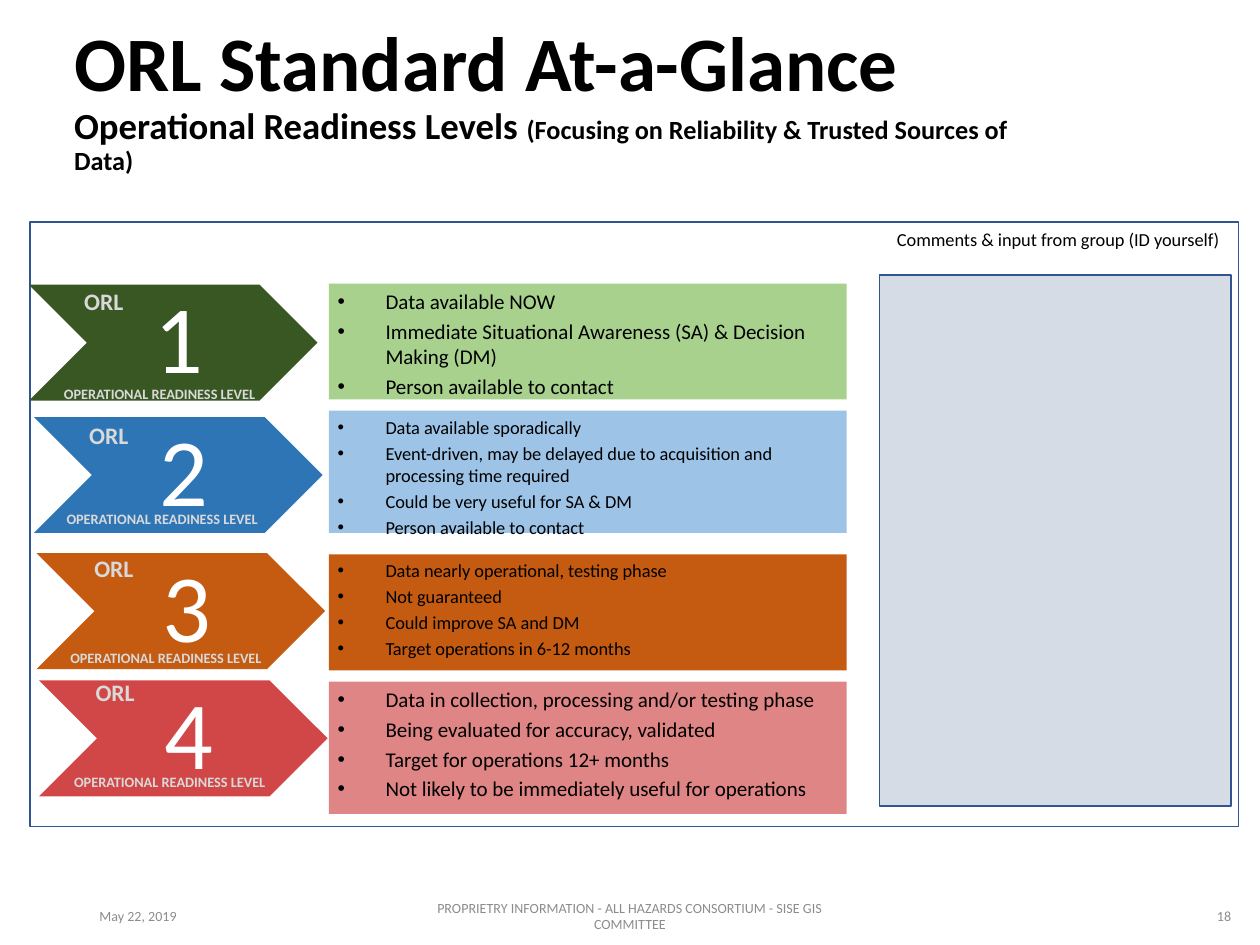
from dataclasses import dataclass
from typing import Optional

from lxml.etree import SubElement
from pptx import Presentation
from pptx.dml.color import RGBColor
from pptx.enum.shapes import MSO_SHAPE
from pptx.enum.text import MSO_ANCHOR, PP_ALIGN
from pptx.oxml.ns import qn
from pptx.util import Inches, Pt


@dataclass(frozen=True)
class Theme:
    font: str = "Calibri"
    black: str = "000000"
    white: str = "FFFFFF"
    outline: str = "325491"
    comment_fill: str = "D6DCE5"
    label: str = "D9D9D9"
    footer: str = "8C8C8C"
    title_size: float = 44
    subtitle_size: float = 21
    detail_size: float = 15
    number_size: float = 55
    label_size: float = 13.5
    caption_size: float = 8.2
    comment_size: float = 10.5
    footer_size: float = 8


THEME = Theme()


@dataclass(frozen=True)
class Box:
    left: float
    top: float
    width: float
    height: float

    def lengths(self) -> tuple:
        return tuple(Inches(v) for v in (self.left, self.top, self.width, self.height))


@dataclass(frozen=True)
class Level:
    number: str
    chevron: tuple[float, float]
    label: tuple[float, float]
    caption: tuple[float, float]
    chevron_fill: str
    panel_top: float
    panel_height: float
    panel_fill: str
    text_size: float
    points: tuple[str, ...]
    chevron_opacity: int = 100
    panel_opacity: int = 100


LEVELS = (
    Level("1", (0.23, 2.26), (0.57, 2.23), (0.41, 3.01), "385723",
          2.25, 0.92, "A9D18E", 12,
          ("Data available NOW",
           "Immediate Situational Awareness (SA) & Decision Making (DM)",
           "Person available to contact")),
    Level("2", (0.27, 3.31), (0.61, 3.29), (0.43, 4.0), "2E75B6",
          3.26, 0.97, "9DC3E6", 10.5,
          ("Data available sporadically",
           "Event-driven, may be delayed due to acquisition and processing time required",
           "Could be very useful for SA & DM",
           "Person available to contact")),
    Level("3", (0.29, 4.39), (0.65, 4.35), (0.46, 5.1), "C55A11",
          4.4, 0.92, "C55A11", 10.5,
          ("Data nearly operational, testing phase",
           "Not guaranteed",
           "Could improve SA and DM",
           "Target operations in 6-12 months")),
    Level("4", (0.31, 5.4), (0.66, 5.33), (0.49, 6.09), "C00000",
          5.41, 1.05, "C00000", 12,
          ("Data in collection, processing and/or testing phase",
           "Being evaluated for accuracy, validated",
           "Target for operations 12+ months",
           "Not likely to be immediately useful for operations"),
          chevron_opacity=72, panel_opacity=48),
)


def add_run(paragraph, text: str, size: float, color: str, bold: bool = False) -> None:
    run = paragraph.add_run()
    run.text = text
    run.font.name = THEME.font
    run.font.size = Pt(size)
    run.font.bold = bold
    run.font.color.rgb = RGBColor.from_string(color)


def set_insets(frame, left: float, top: float, right: float, bottom: float) -> None:
    frame.margin_left, frame.margin_top = Inches(left), Inches(top)
    frame.margin_right, frame.margin_bottom = Inches(right), Inches(bottom)


def add_block(shapes, kind: MSO_SHAPE, box: Box, fill: str,
              line: Optional[str] = None, opacity: int = 100):
    shape = shapes.add_shape(kind, *box.lengths())
    shape.shadow.inherit = False
    shape.fill.solid()
    shape.fill.fore_color.rgb = RGBColor.from_string(fill)
    if opacity < 100:
        color = shape.fill._xPr.find(qn("a:solidFill"))[0]
        SubElement(color, qn("a:alpha")).set("val", str(opacity * 1000))
    if line:
        shape.line.color.rgb = RGBColor.from_string(line)
        shape.line.width = Pt(1)
    else:
        shape.line.fill.background()
    return shape


def add_text(shapes, box: Box, text: str, size: float, color: str, bold: bool = False,
             align: PP_ALIGN = PP_ALIGN.LEFT, anchor: MSO_ANCHOR = MSO_ANCHOR.TOP,
             wrap: bool = False):
    frame = shapes.add_textbox(*box.lengths()).text_frame
    frame.word_wrap = wrap
    frame.vertical_anchor = anchor
    paragraph = frame.paragraphs[0]
    paragraph.alignment = align
    add_run(paragraph, text, size, color, bold)
    return frame


def add_title(slide) -> None:
    frame = add_text(slide.shapes, Box(0.49, 0.25, 7.97, 1.09), "ORL Standard At-a-Glance",
                     THEME.title_size, THEME.black, True,
                     anchor=MSO_ANCHOR.MIDDLE, wrap=True)
    paragraph = frame.paragraphs[0]
    paragraph.line_spacing = 0.9
    paragraph.add_line_break()
    add_run(paragraph, "Operational Readiness Levels ", THEME.subtitle_size, THEME.black, True)
    add_run(paragraph, "(Focusing on Reliability & Trusted Sources of Data)",
            THEME.detail_size, THEME.black, True)


def add_chevron(shapes, level: Level) -> None:
    left, top = level.chevron
    add_block(shapes, MSO_SHAPE.CHEVRON, Box(left, top, 2.29, 0.92),
              level.chevron_fill, opacity=level.chevron_opacity)
    frame = add_text(shapes, Box(left + 0.46, top, 1.38, 0.92), level.number,
                     THEME.number_size, THEME.white, align=PP_ALIGN.CENTER,
                     anchor=MSO_ANCHOR.MIDDLE, wrap=True)
    set_insets(frame, 0.08, 0.04, 0, 0.04)
    frame.paragraphs[0].line_spacing = 0.9


def add_panel(shapes, level: Level) -> None:
    panel = add_block(shapes, MSO_SHAPE.RECTANGLE,
                      Box(2.61, level.panel_top, 4.11, level.panel_height),
                      level.panel_fill, opacity=level.panel_opacity)
    frame = panel.text_frame
    frame.word_wrap = True
    frame.vertical_anchor = MSO_ANCHOR.TOP
    set_insets(frame, 0.07, 0.04, 0.07, 0.04)
    for index, point in enumerate(level.points):
        paragraph = frame.add_paragraph() if index else frame.paragraphs[0]
        paragraph.alignment = PP_ALIGN.LEFT
        if index:
            paragraph.space_before = Pt(round(level.text_size * 0.22, 1))
        properties = paragraph._p.get_or_add_pPr()
        properties.set("marL", str(Inches(0.38)))
        properties.set("indent", str(Inches(-0.38)))
        SubElement(properties, qn("a:buFont")).set("typeface", "Arial")
        SubElement(properties, qn("a:buChar")).set("char", "•")
        add_run(paragraph, point, level.text_size, THEME.black)


def main() -> None:
    presentation = Presentation()
    presentation.slide_width, presentation.slide_height = Inches(10), Inches(7.5)
    slide = presentation.slides.add_slide(presentation.slide_layouts[6])
    shapes = slide.shapes

    # Frame and title
    add_block(shapes, MSO_SHAPE.RECTANGLE, Box(0.24, 1.76, 9.59, 4.8),
              THEME.white, THEME.outline)
    add_title(slide)

    # Readiness levels
    chevrons = shapes.add_group_shape()
    for level in LEVELS:
        add_chevron(chevrons.shapes, level)
    for level in LEVELS:
        add_panel(shapes, level)
        add_text(shapes, Box(*level.label, 0.52, 0.33), "ORL",
                 THEME.label_size, THEME.label, True)
        add_text(shapes, Box(*level.caption, 1.76, 0.24), "OPERATIONAL READINESS LEVEL",
                 THEME.caption_size, THEME.label, True)

    # Comment area
    add_text(shapes, Box(7.02, 1.76, 2.81, 0.28), "Comments & input from group (ID yourself)",
             THEME.comment_size, THEME.black)
    add_block(shapes, MSO_SHAPE.RECTANGLE, Box(6.98, 2.18, 2.79, 4.22),
              THEME.comment_fill, THEME.outline)

    # Footer
    for left, width, text, align in (
        (0.69, 2.25, "May 22, 2019", PP_ALIGN.LEFT),
        (3.31, 3.38, "PROPRIETRY INFORMATION - ALL HAZARDS CONSORTIUM - SISE GIS COMMITTEE",
         PP_ALIGN.CENTER),
        (7.62, 2.25, "18", PP_ALIGN.RIGHT),
    ):
        add_text(shapes, Box(left, 7.07, width, 0.4), text, THEME.footer_size, THEME.footer,
                 align=align, anchor=MSO_ANCHOR.MIDDLE, wrap=True)

    presentation.save("out.pptx")


if __name__ == "__main__":
    main()
